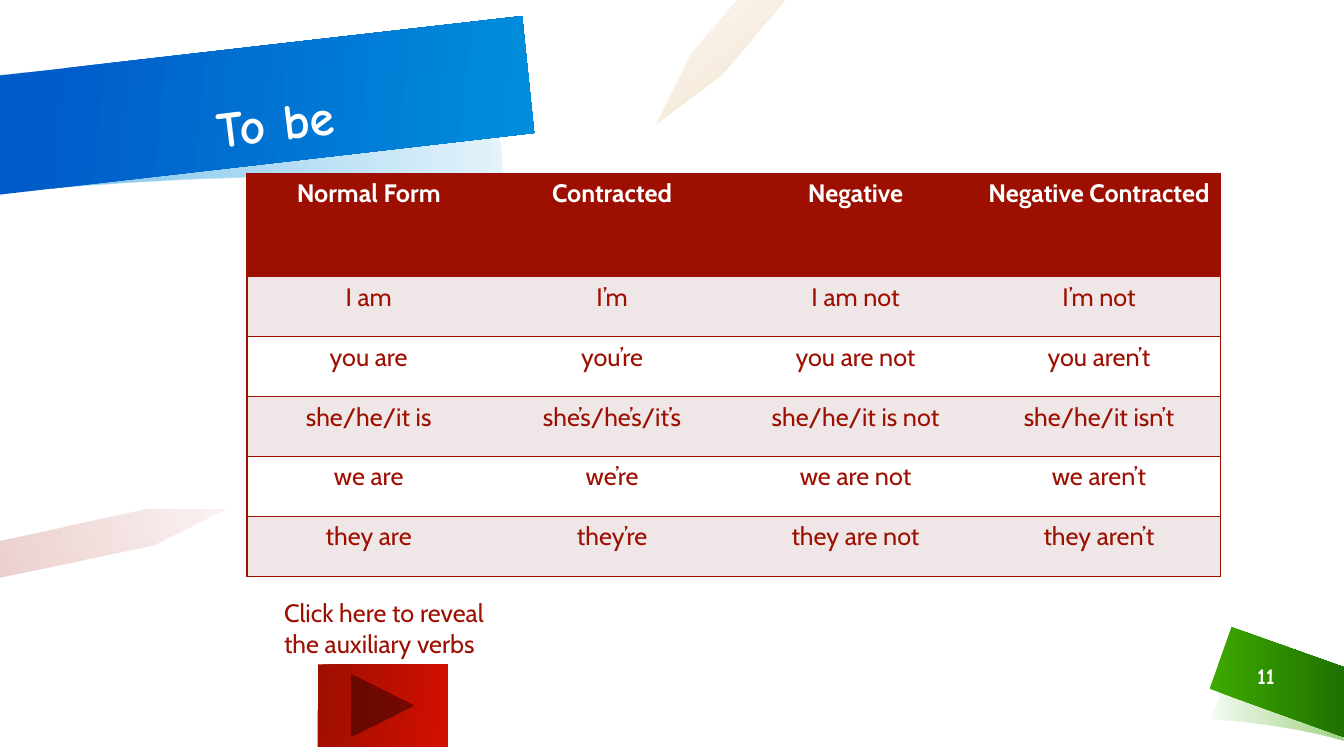
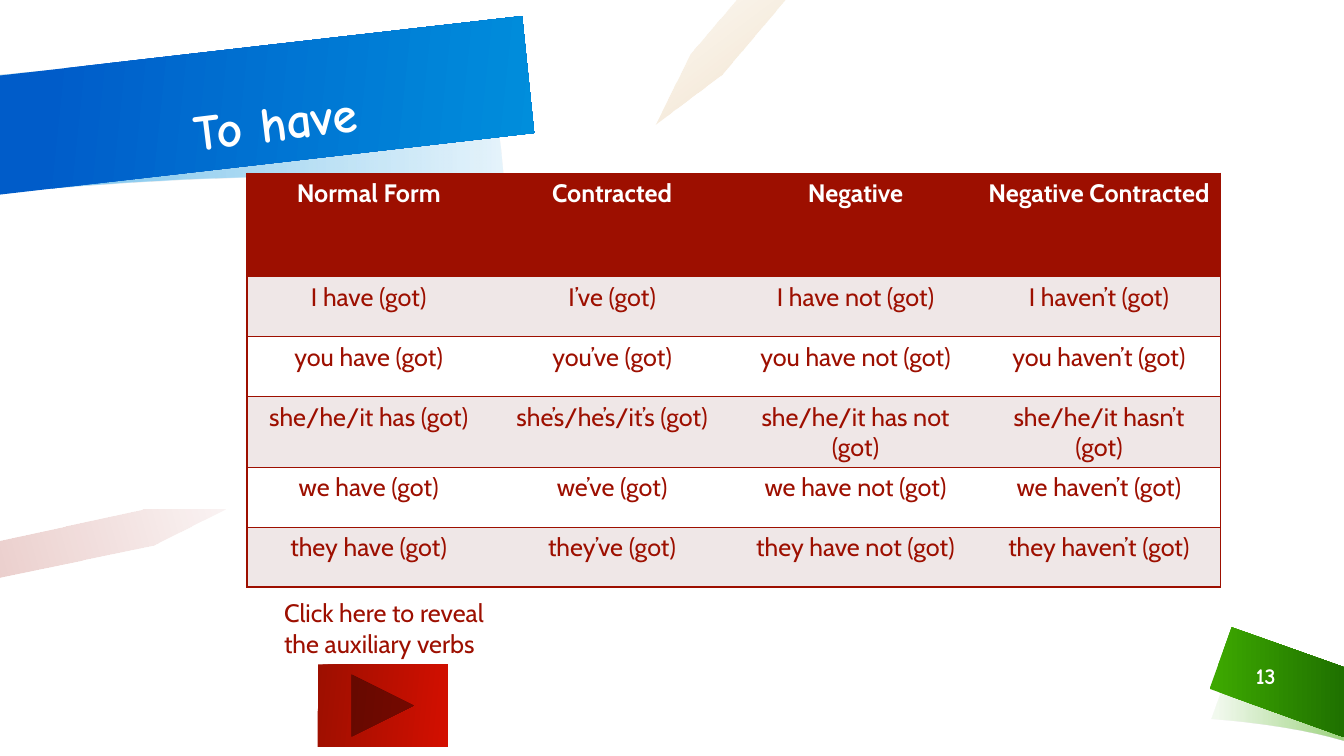
import pptx
import pptx.dml.color
import pptx.enum.shapes
import pptx.enum.text
import pptx.oxml.ns
import pptx.util
from lxml import etree

Pt = pptx.util.Pt
RGBColor = pptx.dml.color.RGBColor
ALIGN = pptx.enum.text.PP_ALIGN
ANCHOR = pptx.enum.text.MSO_ANCHOR
qn = pptx.oxml.ns.qn

# Colours and fonts
WHITE = RGBColor(0xFF, 0xFF, 0xFF)
RED = RGBColor(0x9D, 0x0F, 0x00)
BRIGHT_RED = RGBColor(0xD3, 0x0F, 0x00)
PALE_RED = RGBColor(0xEF, 0xE7, 0xE7)
BLUE = RGBColor(0x00, 0x5C, 0xC9)
LIGHT_BLUE = RGBColor(0x00, 0x8E, 0xDC)
GREEN = RGBColor(0x3D, 0xA8, 0x00)
DARK_GREEN = RGBColor(0x1F, 0x71, 0x00)
TAN = RGBColor(0xC0, 0x74, 0x00)
TITLE_FONT, BODY_FONT = "Comic Neue", "Cabin"

# Table measures, in points
COLUMN_WIDTH, HEADER_HEIGHT, ROW_HEIGHT = 173.9, 74, 42.8
NO_GRID_STYLE = "{2D5ABB26-0587-4C30-8999-92F81FD0307C}"

# Decoration: outline (six numbers make a curve), clockwise angle,
# and gradient stops as (position, colour, opacity in percent)
DECORATION = [
    # Number band and its shade
    ([(865.5, 513.5), (865.5, 513.5, 920.2, 517, 960, 529), (960, 481),
      (916, 469, 881.3, 469.5, 881.3, 469.5)],
     0, [(3, GREEN, 6), (100, GREEN, 50)]),
    ([(960, 476.6), (879.8, 448), (864, 492), (960, 526.5)],
     0, [(3, GREEN, 100), (100, DARK_GREEN, 100)]),
    # Title band and its shade
    ([(359.3, 128.2), (350.6, 45.4), (350.6, 45.4, 225.4, 32.4, 0, 54),
      (0, 137.5), (206, 117.4, 359.3, 128.2, 359.3, 128.2)],
     180, [(0, LIGHT_BLUE, 10), (88, LIGHT_BLUE, 50)]),
    ([(0, 139), (381.6, 95), (373, 11.5), (0, 54)],
     6, [(9, BLUE, 100), (100, LIGHT_BLUE, 100)]),
    # Pencils
    ([(561, 0), (526.3, 0), (493.2, 38.2), (468, 88.6), (515.5, 53.3)],
     53, [(0, TAN, 5), (100, TAN, 20)]),
    ([(161.3, 363.6), (102.2, 363.6), (0, 386), (0, 412.6), (110.2, 389.5)],
     164, [(0, RED, 5), (100, RED, 20)]),
]

HEADINGS = ["Normal Form", "Contracted", "Negative", "Negative Contracted"]
TO_BE = [
    ["I am", "I’m", "I am not", "I’m not"],
    ["you are", "you’re", "you are not", "you aren’t"],
    ["she/he/it is", "she’s/he’s/it’s", "she/he/it is not", "she/he/it isn’t"],
    ["we are", "we’re", "we are not", "we aren’t"],
    ["they are", "they’re", "they are not", "they aren’t"],
]
TO_HAVE = [
    ["I have (got)", "I’ve (got)", "I have not (got)", "I haven’t (got)"],
    ["you have (got)", "you’ve (got)", "you have not (got)",
     "you haven’t (got)"],
    ["she/he/it has (got)", "she’s/he’s/it’s (got)",
     "she/he/it has not (got)", "she/he/it hasn’t (got)"],
    ["we have (got)", "we’ve (got)", "we have not (got)", "we haven’t (got)"],
    ["they have (got)", "they’ve (got)", "they have not (got)",
     "they haven’t (got)"],
]


def paint_gradient(shape, angle, stops):
    """Fill a shape with a two-stop gradient, without line or shadow."""
    shape.shadow.inherit = False
    shape.line.fill.background()
    shape.fill.gradient()
    shape.fill.gradient_angle = (360 - angle) % 360
    for stop, (position, color, _) in zip(shape.fill.gradient_stops, stops):
        stop.position = position / 100
        stop.color.rgb = color
    colors = shape._element.spPr.iter(qn("a:srgbClr"))
    for element, (_, _, opacity) in zip(list(colors), stops):
        if opacity < 100:
            etree.SubElement(element, qn("a:alpha"), val=str(opacity * 1000))


def flatten(outline, steps=16):
    """Turn an outline with cubic curves into a list of points."""
    points = []
    for part in outline:
        if len(part) == 2:
            points.append(part)
            continue
        knots = [points[-1], part[0:2], part[2:4], part[4:6]]
        for step in range(1, steps + 1):
            t = step / steps
            weights = [(1 - t) ** 3, 3 * t * (1 - t) ** 2,
                       3 * t * t * (1 - t), t ** 3]
            points.append(tuple(
                sum(weight * knot[axis] for weight, knot in zip(weights, knots))
                for axis in (0, 1)))
    return points


def add_outline(page, outline, angle, stops):
    points = [(Pt(x), Pt(y)) for x, y in flatten(outline)]
    builder = page.shapes.build_freeform(*points[0], scale=1.0)
    builder.add_line_segments(points[1:], close=True)
    paint_gradient(builder.convert_to_shape(), angle, stops)


def write(frame, text, font, size, color, bold=False, align=ALIGN.CENTER):
    para = frame.paragraphs[0]
    para.alignment = align
    span = para.add_run()
    span.text = text
    span.font.name = font
    span.font.size = Pt(size)
    span.font.bold = bold
    span.font.color.rgb = color
    return para


def add_text_box(page, left, top, width, height, anchor=ANCHOR.TOP):
    box = page.shapes.add_textbox(Pt(left), Pt(top), Pt(width), Pt(height))
    box.text_frame.word_wrap = True
    box.text_frame.vertical_anchor = anchor
    return box


def add_title(page, text):
    box = add_text_box(page, 23, 28, 345.6, 104.4, ANCHOR.MIDDLE)
    box.rotation = -7
    box.text_frame.margin_top = Pt(22)
    para = write(box.text_frame, text, TITLE_FONT, 36, WHITE, bold=True)
    para.line_spacing = 0.9


def add_page_number(page, number):
    box = add_text_box(page, 879, 468, 50.4, 28.8, ANCHOR.MIDDLE)
    write(box.text_frame, str(number), TITLE_FONT, 16, WHITE, bold=True)


def add_border(cell, side):
    line = etree.SubElement(cell._tc.get_or_add_tcPr(), qn("a:ln" + side),
                            w=str(Pt(1)))
    fill = etree.SubElement(line, qn("a:solidFill"))
    etree.SubElement(fill, qn("a:srgbClr"), val=str(RED))


def add_verb_table(page, forms):
    rows = [HEADINGS] + forms
    frame = page.shapes.add_table(
        len(rows), len(HEADINGS), Pt(176.4), Pt(123.8),
        Pt(COLUMN_WIDTH * len(HEADINGS)),
        Pt(HEADER_HEIGHT + ROW_HEIGHT * len(forms)))
    table = frame.table
    table._tbl.tblPr.find(qn("a:tableStyleId")).text = NO_GRID_STYLE
    for column in table.columns:
        column.width = Pt(COLUMN_WIDTH)
    for row_index, texts in enumerate(rows):
        header = row_index == 0
        table.rows[row_index].height = Pt(HEADER_HEIGHT if header
                                          else ROW_HEIGHT)
        background = RED if header else (WHITE, PALE_RED)[row_index % 2]
        for column_index, text in enumerate(texts):
            cell = table.cell(row_index, column_index)
            if column_index == 0:
                add_border(cell, "L")
            if column_index == len(texts) - 1:
                add_border(cell, "R")
            add_border(cell, "T")
            add_border(cell, "B")
            cell.fill.solid()
            cell.fill.fore_color.rgb = background
            write(cell.text_frame, text, BODY_FONT, 18,
                  WHITE if header else RED, bold=header)


def add_reveal_button(page):
    button = page.shapes.add_shape(
        pptx.enum.shapes.MSO_SHAPE.ACTION_BUTTON_FORWARD_OR_NEXT,
        Pt(226.8), Pt(474.5), Pt(92.9), Pt(59))
    paint_gradient(button, 6, [(0, RED, 100), (100, BRIGHT_RED, 100)])
    box = add_text_box(page, 195.8, 423.4, 181.4, 51)
    write(box.text_frame, "Click here to reveal the auxiliary verbs",
          BODY_FONT, 18, RED, align=ALIGN.LEFT)


def add_verb_page(deck, number, title, forms):
    page = deck.slides.add_slide(deck.slide_layouts[6])
    for outline, angle, stops in DECORATION:
        add_outline(page, outline, angle, stops)
    add_page_number(page, number)
    add_title(page, title)
    add_verb_table(page, forms)
    add_reveal_button(page)


def main():
    deck = pptx.Presentation()
    deck.slide_width, deck.slide_height = Pt(960), Pt(540)
    add_verb_page(deck, 11, "To be", TO_BE)
    add_verb_page(deck, 13, "To have", TO_HAVE)
    deck.save("out.pptx")


if __name__ == "__main__":
    main()
